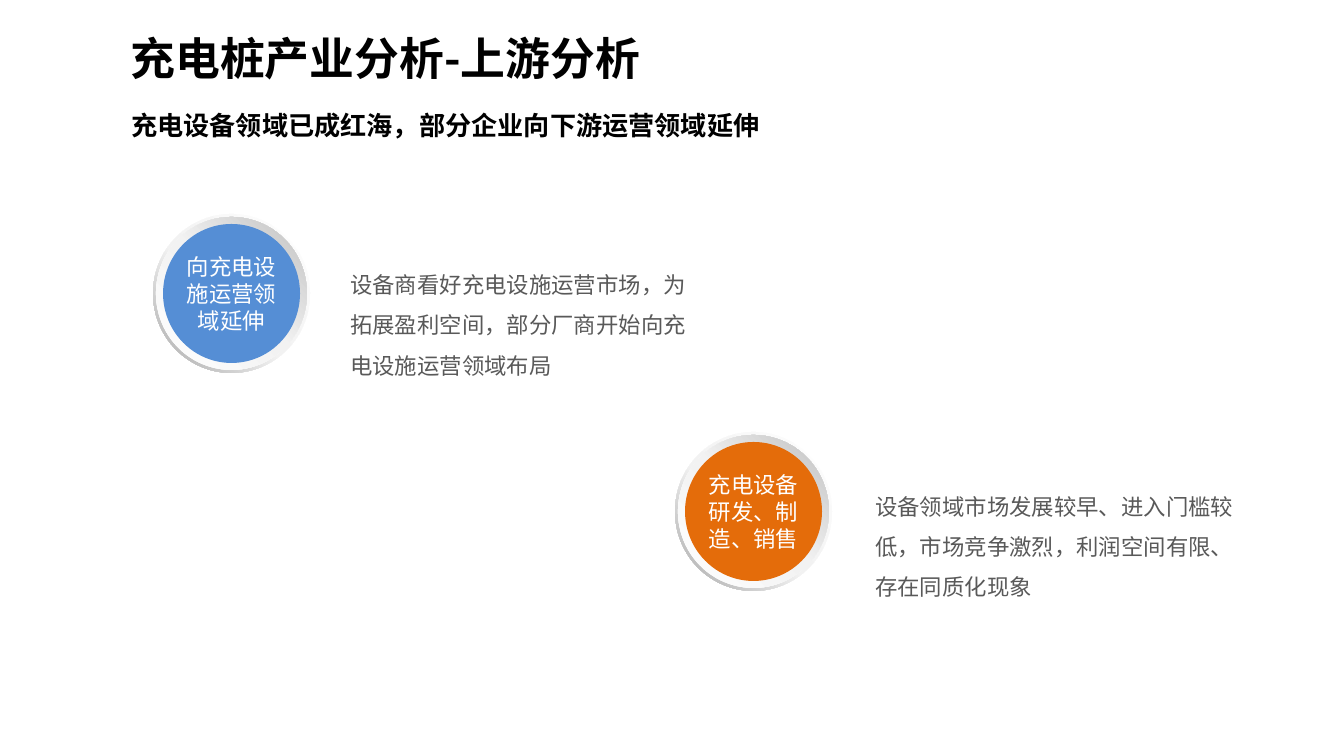
from copy import deepcopy

from lxml import etree
from pptx import Presentation
from pptx.dml.color import RGBColor
from pptx.enum.shapes import MSO_SHAPE
from pptx.enum.text import MSO_ANCHOR, MSO_AUTO_SIZE, PP_ALIGN
from pptx.oxml.ns import qn
from pptx.util import Emu, Pt

DONUT, ELLIPSE = MSO_SHAPE.DONUT, MSO_SHAPE.OVAL
TOP, MIDDLE = MSO_ANCHOR.TOP, MSO_ANCHOR.MIDDLE
LEFT, CENTER = PP_ALIGN.LEFT, PP_ALIGN.CENTER
NO_AUTOSIZE = MSO_AUTO_SIZE.NONE

WIDTH, HEIGHT = 1344, 756
EMU_PER_PX = 9144000 / WIDTH

SANS, LATIN = "Noto Sans CJK SC", "Arial"
BLACK = RGBColor(0x00, 0x00, 0x00)
WHITE = RGBColor(0xFF, 0xFF, 0xFF)
PALE = RGBColor(0xF2, 0xF2, 0xF2)
SILVER = RGBColor(0xBF, 0xBF, 0xBF)
STEEL = RGBColor(0xA6, 0xA6, 0xA6)
GRAY = RGBColor(0x59, 0x59, 0x59)
BLUE = RGBColor(0x55, 0x8E, 0xD5)
ORANGE = RGBColor(0xE4, 0x6C, 0x0A)

RIM_STOPS = [(0, WHITE), (0.55, PALE), (1, STEEL)]
BEVEL_STOPS = [(0, WHITE), (0.51, PALE), (1, SILVER)]

# Badge box, badge colour, badge label, text box, text
TOPICS = [
    ((153, 214, 157, 159), BLUE, "向充电设施运营领域延伸", (337, 251, 366, 136),
     "设备商看好充电设施运营市场，为拓展盈利空间，部分厂商开始向充电设施运营领域布局"),
    ((675, 432, 157, 159), ORANGE, "充电设备研发、制造、销售", (862, 473, 398, 136),
     "设备领域市场发展较早、进入门槛较低，市场竞争激烈，利润空间有限、存在同质化现象"),
]


def px(length):
    return Emu(round(length * EMU_PER_PX))


def to_emu(box):
    return [px(length) for length in box]


def inset(box, margin):
    left, top, width, height = box
    return left + margin, top + margin, width - 2 * margin, height - 2 * margin


def write(frame, text, size, color, font=SANS, bold=False, align=LEFT, anchor=TOP, spacing=None):
    frame.word_wrap = True
    frame.auto_size = NO_AUTOSIZE
    frame.vertical_anchor = anchor
    para = frame.paragraphs[0]
    para.alignment = align
    if spacing:
        para.line_spacing = spacing
    span = para.add_run()
    span.text = text
    span.font.size = Pt(size)
    span.font.bold = bold
    span.font.color.rgb = color
    span.font.name = font
    east_asian = etree.SubElement(span.font._element, qn("a:ea"))
    east_asian.set("typeface", SANS)


def add_plain_shape(shapes, kind, box):
    shape = shapes.add_shape(kind, *to_emu(box))
    shape.shadow.inherit = False
    shape.line.fill.background()
    return shape


def fill_gradient(shape, stops, angle):
    """Fill with three or more stops; the angle runs counter-clockwise."""
    fill = shape.fill
    fill.gradient()
    fill.gradient_angle = angle
    stop_list = shape._element.spPr.find(".//" + qn("a:gsLst"))
    while len(stop_list) < len(stops):
        stop_list.append(deepcopy(stop_list[-1]))
    for stop, (position, color) in zip(fill.gradient_stops, stops):
        stop.color.rgb = color
        stop.position = position


def add_heading(page, box, text):
    title = page.shapes.title
    title.left, title.top, title.width, title.height = to_emu(box)
    write(title.text_frame, text, 24, BLACK, bold=True, anchor=MIDDLE)


def add_text(page, box, text, size, color, bold=False, spacing=None):
    frame = page.shapes.add_textbox(*to_emu(box)).text_frame
    write(frame, text, size, color, bold=bold, spacing=spacing)


def add_badge(page, box, color, label):
    group = page.shapes.add_group_shape()
    rim = add_plain_shape(group.shapes, DONUT, box)
    rim.adjustments[0] = 0.05
    fill_gradient(rim, RIM_STOPS, 225)

    bevel = add_plain_shape(group.shapes, ELLIPSE, inset(box, 3))
    fill_gradient(bevel, BEVEL_STOPS, 45)

    face = add_plain_shape(group.shapes, ELLIPSE, inset(box, 10))
    face.fill.solid()
    face.fill.fore_color.rgb = color
    frame = face.text_frame
    frame.margin_left = frame.margin_right = 0
    write(frame, label, 12, WHITE, font=LATIN, align=CENTER, anchor=MIDDLE)


def main():
    deck = Presentation()
    deck.slide_width, deck.slide_height = px(WIDTH), px(HEIGHT)
    page = deck.slides.add_slide(deck.slide_layouts[5])
    add_heading(page, (117, 23, 1058, 70), "充电桩产业分析-上游分析")
    add_text(page, (118, 103, 667, 71), "充电设备领域已成红海，部分企业向下游运营领域延伸",
             14, BLACK, bold=True)
    for badge_box, color, label, text_box, text in TOPICS:
        add_badge(page, badge_box, color, label)
        add_text(page, text_box, text, 12, GRAY, spacing=1.5)
    deck.save("out.pptx")


if __name__ == "__main__":
    main()
